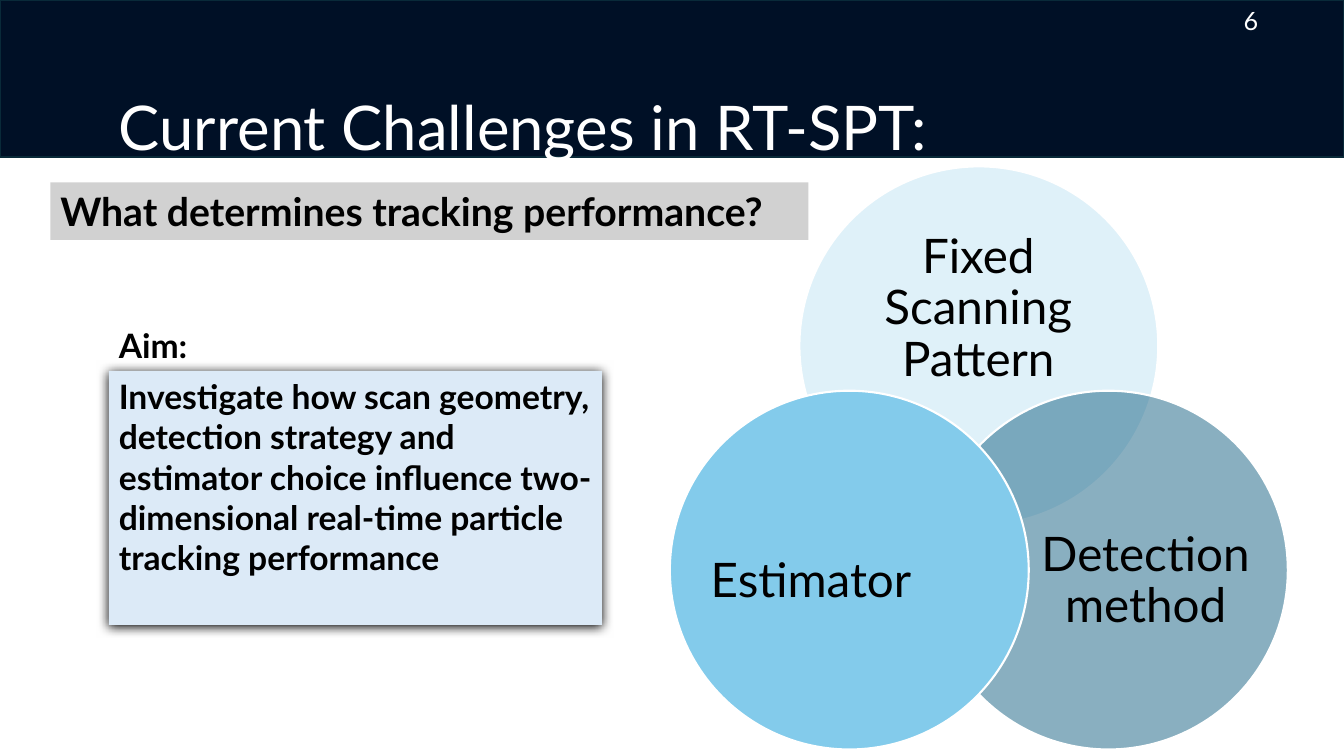
import math

from lxml import etree
from pptx import Presentation
from pptx import util as u
from pptx.dml.color import RGBColor
from pptx.enum import shapes, text
from pptx.oxml import parse_xml
from pptx.oxml.ns import nsdecls, qn

FONT = "Lato"
BLACK = RGBColor(0x00, 0x00, 0x00)
WHITE = RGBColor(0xFF, 0xFF, 0xFF)
NAVY = RGBColor(0x00, 0x10, 0x26)
NAVY_EDGE = RGBColor(0x09, 0x2A, 0x39)
GREY = RGBColor(0xD1, 0xD1, 0xD1)
PALE_BLUE = RGBColor(0xDC, 0xEA, 0xF7)
ICE = RGBColor(0xC1, 0xE5, 0xF5)
TEAL = RGBColor(0x15, 0x60, 0x82)
SKY = RGBColor(0x83, 0xCB, 0xEB)

# Areas are left, top, width and height in percent of the slide.
TITLE = ("Current Challenges in RT-SPT:", (8.1, 7.6, 86.25, 19.33))
BAND = (0, 0, 100, 20.8)
BOXES = [
    ("What determines tracking performance?", (3.75, 24.13, 56.4, 7.6), 28, True, BLACK, GREY),
    ("Investigate how scan geometry, detection strategy and estimator choice influence "
     "two-dimensional real-time particle tracking performance",
     (8.1, 49.07, 36.68, 33.6), 24, True, BLACK, PALE_BLUE),
    ("Aim:", (8.1, 42.27, 16.73, 6.67), 24, True, BLACK, None),
    ("6", (91.8, 0, 8.2, 5.33), 18, False, WHITE, None),
]
VENN_CENTRE = (72.83, 65.52)
VENN_ORBIT = 19.78
VENN_RADIUS = 23.73
VENN = [
    ("Fixed Scanning Pattern", -90, ICE, 50, (63, 30.27, 19.58, 21.33)),
    ("Detection method", 30, TEAL, 50, (77.25, 63.87, 15.98, 26.13)),
    ("Estimator", 150, SKY, 100, (52.35, 63.87, 15.98, 26.13)),
]

deck = Presentation()
deck.slide_width, deck.slide_height = u.Inches(13.33), u.Inches(7.5)
page = deck.slides.add_slide(deck.slide_layouts[5])


def across(share):
    return round(deck.slide_width * share / 100)


def down(share):
    return round(deck.slide_height * share / 100)


def place(area):
    left, top, width, height = area
    return across(left), down(top), across(width), down(height)


def write(box, words, size, color, bold=False, align=text.PP_ALIGN.LEFT,
          anchor=text.MSO_ANCHOR.TOP, spacing=None):
    frame = box.text_frame
    frame.word_wrap = True
    frame.auto_size = text.MSO_AUTO_SIZE.NONE
    frame.vertical_anchor = anchor
    para = frame.paragraphs[0]
    para.text = words
    para.alignment = align
    para.line_spacing = spacing
    para.font.name, para.font.size, para.font.bold = FONT, u.Pt(size), bold
    para.font.color.rgb = color


def add_filled(kind, bounds, fill, edge=None):
    shape = page.shapes.add_shape(kind, *bounds)
    shape.shadow.inherit = False
    shape.fill.solid()
    shape.fill.fore_color.rgb = fill
    if edge is None:
        shape.line.fill.background()
    else:
        shape.line.color.rgb = edge
        shape.line.width = u.Pt(1.5)
    return shape


def add_shadow(shape):
    effects = shape.element.spPr.find(qn("a:effectLst"))
    effects.append(parse_xml(
        f'<a:outerShdw {nsdecls("a")} blurRad="{u.Pt(8.5)}" dist="{u.Pt(1)}" dir="5400000" '
        'algn="t" rotWithShape="0"><a:srgbClr val="000000"/></a:outerShdw>'))


def add_venn():
    radius = down(VENN_RADIUS)
    for words, angle, fill, opacity, label_area in VENN:
        turn = math.radians(angle)
        left = across(VENN_CENTRE[0]) + round(down(VENN_ORBIT) * math.cos(turn)) - radius
        top = down(VENN_CENTRE[1]) + round(down(VENN_ORBIT) * math.sin(turn)) - radius
        circle = add_filled(shapes.MSO_SHAPE.OVAL, (left, top, 2 * radius, 2 * radius), fill, WHITE)
        if opacity < 100:
            color = circle.element.spPr.find(qn("a:solidFill")).find(qn("a:srgbClr"))
            etree.SubElement(color, qn("a:alpha"), val=str(opacity * 1000))
        label = page.shapes.add_textbox(*place(label_area))
        frame = label.text_frame
        frame.margin_left = frame.margin_right = frame.margin_top = frame.margin_bottom = 0
        write(label, words, 34, BLACK, align=text.PP_ALIGN.CENTER,
              anchor=text.MSO_ANCHOR.MIDDLE, spacing=0.9)


def add_header():
    band = add_filled(shapes.MSO_SHAPE.RECTANGLE, place(BAND), NAVY, NAVY_EDGE)
    title = page.shapes.title
    title.element.addprevious(band.element)
    words, area = TITLE
    title.left, title.top, title.width, title.height = place(area)
    write(title, words, 44, WHITE, anchor=text.MSO_ANCHOR.MIDDLE, spacing=0.9)


def add_boxes():
    for words, area, size, bold, color, fill in BOXES:
        if fill is None:
            box = page.shapes.add_textbox(*place(area))
        else:
            box = add_filled(shapes.MSO_SHAPE.RECTANGLE, place(area), fill)
        if fill == PALE_BLUE:
            add_shadow(box)
        write(box, words, size, color, bold)


add_header()
add_venn()
add_boxes()
deck.save("out.pptx")
